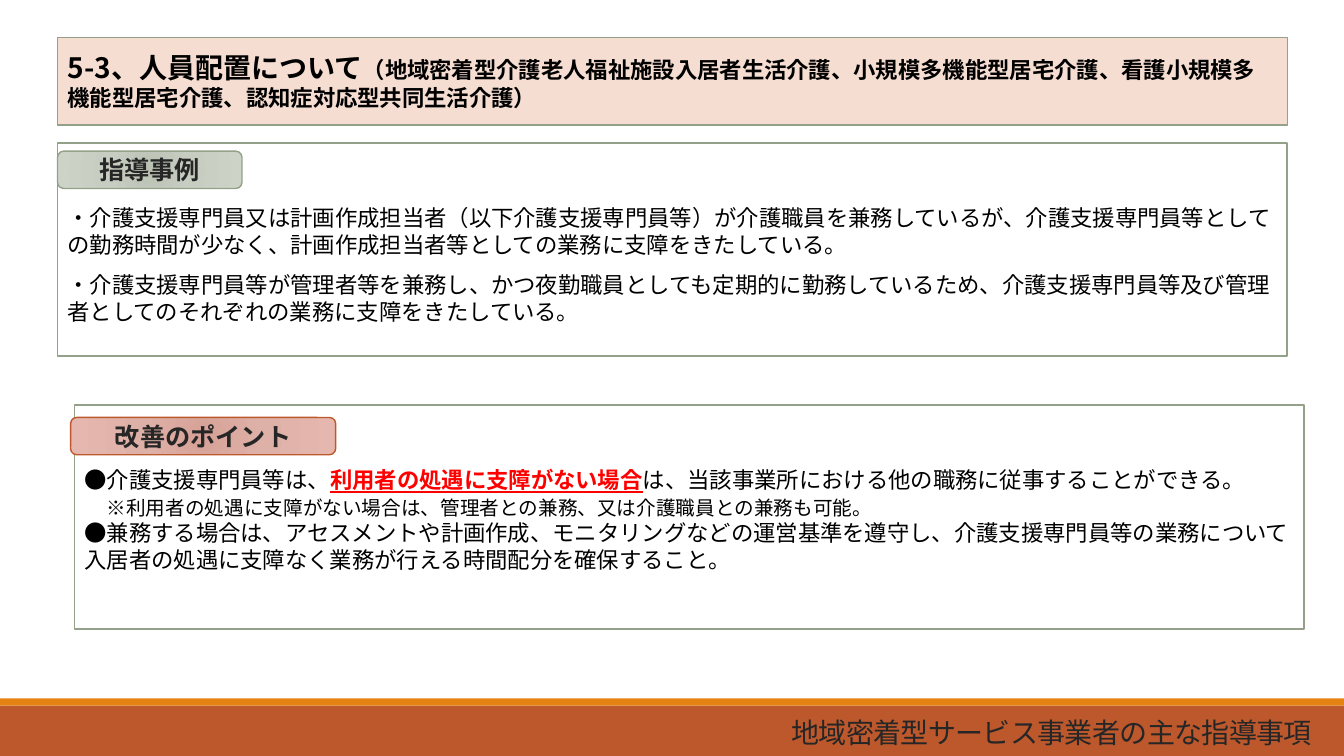
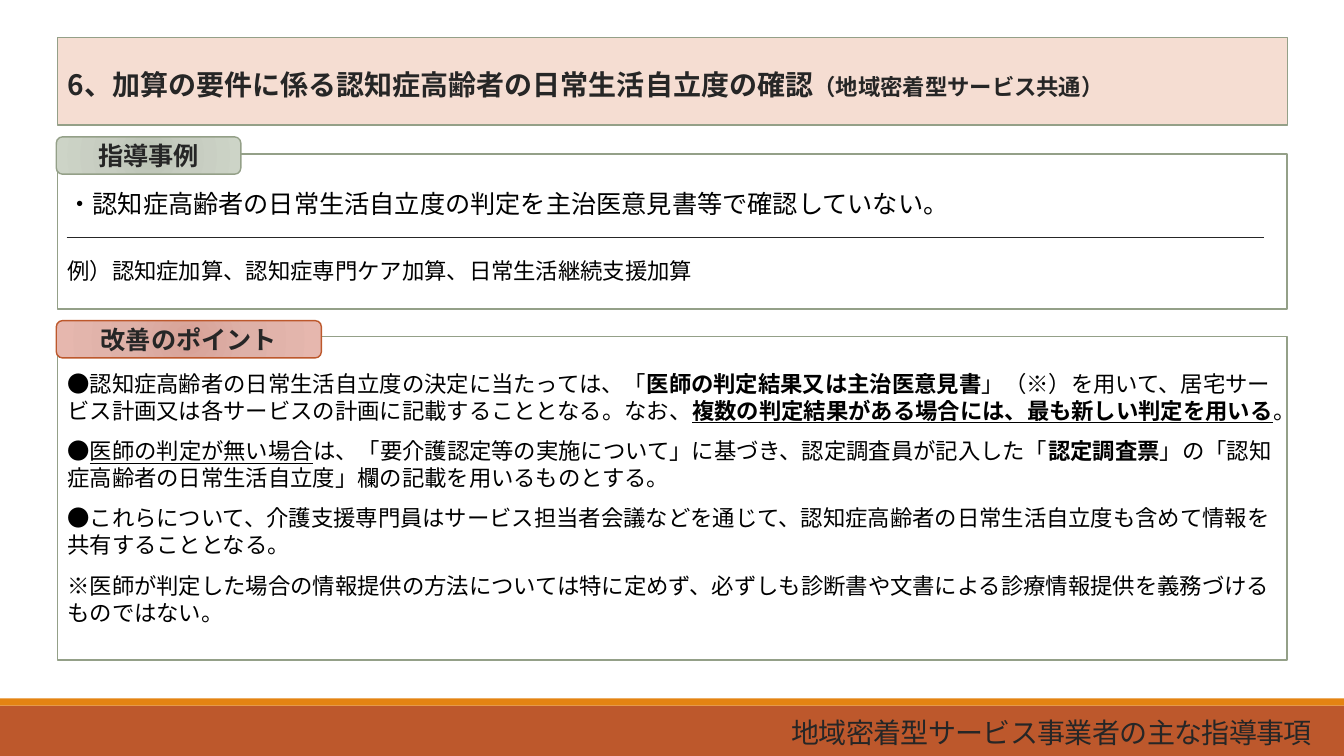
from dataclasses import dataclass

from lxml.etree import SubElement
from pptx import Presentation
from pptx.dml.color import RGBColor
from pptx.enum.lang import MSO_LANGUAGE_ID
from pptx.enum.shapes import MSO_CONNECTOR, MSO_SHAPE
from pptx.enum.text import MSO_ANCHOR, MSO_AUTO_SIZE, PP_ALIGN
from pptx.oxml import parse_xml
from pptx.oxml.ns import nsdecls, qn
from pptx.util import Cm, Pt


@dataclass(frozen=True)
class Theme:
    font: str = "Noto Sans CJK JP"
    black: str = "000000"
    dark: str = "262626"
    red: str = "FF0000"
    white: str = "FFFFFF"
    peach: str = "F5DDD2"
    sage: str = "94A088"
    rust: str = "BD582C"
    orange: str = "E48312"
    heading_size: int = 20
    tag_size: int = 18
    lead_size: int = 18
    body_size: int = 16
    note_size: int = 14
    leading: float = 1.2
    paragraph_gap: float = 9.6


@dataclass(frozen=True)
class Line:
    spans: tuple
    size: int = Theme.body_size
    before: float = Theme.paragraph_gap
    indent: float = 0


theme = Theme()
BOLD = {"bold": True}
UNDERLINE = {"underline": True}
SMALL = {"size": theme.body_size}
LEFT, WIDTH = 1.45, 30.99
FOOTER = "地域密着型サービス事業者の主な指導事項"

# Tag label: width, outline and gradient stops
TAGS = {
    "指導事例": (4.65, theme.sage, ("BBC3B5", "C7CDC1", "CDD4C7")),
    "改善のポイント": (6.68, theme.rust, ("D7A197", "DEB1A8", "E6B7AE")),
}

# Panel: tag, tag place, panel left, top and height, top inset, lines
PAGES = [
    {
        "heading": (
            ("5-3、人員配置について", {}),
            ("（地域密着型介護老人福祉施設入居者生活介護、小規模多機能型居宅介護、"
             "看護小規模多機能型居宅介護、認知症対応型共同生活介護）", SMALL),
        ),
        "heading_color": theme.black,
        "heading_leading": theme.body_size,
        "panels": [
            ("指導事例", (1.45, 3.81), LEFT, 3.61, 5.36, 1.54, [
                Line((("・介護支援専門員又は計画作成担当者（以下介護支援専門員等）が"
                       "介護職員を兼務しているが、介護支援専門員等としての勤務時間が少なく、"
                       "計画作成担当者等としての業務に支障をきたしている。", {}),), before=0),
                Line((("・介護支援専門員等が管理者等を兼務し、かつ夜勤職員としても"
                       "定期的に勤務しているため、介護支援専門員等及び管理者としての"
                       "それぞれの業務に支障をきたしている。", {}),)),
            ]),
            ("改善のポイント", (1.78, 10.52), 1.88, 10.21, 5.64, 1.54, [
                Line((("●介護支援専門員等は、", {}),
                      ("利用者の処遇に支障がない場合", BOLD | UNDERLINE | {"color": theme.red}),
                      ("は、当該事業所における他の職務に従事することができる。", {})), before=0),
                Line((("※利用者の処遇に支障がない場合は、管理者との兼務、"
                       "又は介護職員との兼務も可能。", {}),),
                     size=theme.note_size, before=2, indent=0.56),
                Line((("●兼務する場合は、アセスメントや計画作成、モニタリングなどの"
                       "運営基準を遵守し、介護支援専門員等の業務について入居者の処遇に"
                       "支障なく業務が行える時間配分を確保すること。", {}),), before=0),
            ]),
        ],
        "rules": [],
    },
    {
        "heading": (
            ("6、加算の要件に係る認知症高齢者の日常生活自立度の確認", {}),
            ("（地域密着型サービス共通）", SMALL),
        ),
        "heading_color": theme.dark,
        "heading_leading": theme.heading_size,
        "panels": [
            ("指導事例", (1.42, 3.45), LEFT, 3.89, 3.89, 0.85, [
                Line((("・認知症高齢者の日常生活自立度の判定を"
                       "主治医意見書等で確認していない。", {}),),
                     size=theme.lead_size, before=0),
                Line((("例）認知症加算、認知症専門ケア加算、日常生活継続支援加算", {}),),
                     before=27.5),
            ]),
            ("改善のポイント", (1.42, 8.08), LEFT, 8.48, 8.15, 0.85, [
                Line((("●認知症高齢者の日常生活自立度の決定に当たっては、「", {}),
                      ("医師の判定結果又は主治医意見書", BOLD),
                      ("」（※）を用いて、居宅サービス計画又は各サービスの計画に"
                       "記載することとなる。なお、", {}),
                      ("複数の判定結果がある場合には、最も新しい判定を用いる", BOLD | UNDERLINE),
                      ("。", {})), before=0),
                Line((("●", {}),
                      ("医師の判定が無い場合", UNDERLINE),
                      ("は、「要介護認定等の実施について」に基づき、"
                       "認定調査員が記入した「", {}),
                      ("認定調査票", BOLD),
                      ("」の「認知症高齢者の日常生活自立度」欄の記載を用いるものとする。", {}))),
                Line((("●これらについて、介護支援専門員はサービス担当者会議などを通じて、"
                       "認知症高齢者の日常生活自立度も含めて情報を共有することとなる。", {}),)),
                Line((("※医師が判定した場合の情報提供の方法については特に定めず、"
                       "必ずしも診断書や文書による診療情報提供を義務づけるものではない。", {}),)),
            ]),
        ],
        "rules": [5.99],
    },
]


def add_block(page, kind, left, top, width, height, fill=None, line=None, weight=1):
    shape = page.shapes.add_shape(kind, Cm(left), Cm(top), Cm(width), Cm(height))
    shape.shadow.inherit = False
    if fill:
        shape.fill.solid()
        shape.fill.fore_color.rgb = RGBColor.from_string(fill)
    if line:
        shape.line.color.rgb = RGBColor.from_string(line)
        shape.line.width = Pt(weight)
    else:
        shape.line.fill.background()
    return shape


def write_spans(para, spans, size, color, leading=None, align=PP_ALIGN.LEFT, **shared):
    """Add (text, style) runs; a span's style overrides the shared one."""
    para.alignment = align
    para.line_spacing = Pt((leading or size) * theme.leading)
    for text, style in spans:
        look = {"size": size, "color": color} | shared | style
        span = para.add_run()
        span.text = text
        font = span.font
        font.name = theme.font
        font.size = Pt(look["size"])
        font.bold = look.get("bold", False)
        font.underline = look.get("underline", False)
        font.color.rgb = RGBColor.from_string(look["color"])
        font.language_id = MSO_LANGUAGE_ID.JAPANESE
        properties = span._r.get_or_add_rPr()
        SubElement(properties, qn("a:ea"), typeface=theme.font)
        if "spacing" in look:
            properties.set("spc", str(look["spacing"]))


deck = Presentation()
deck.slide_width, deck.slide_height = Cm(33.87), Cm(19.05)
layout = deck.slide_layouts[5]

for number, content in enumerate(PAGES):
    page = deck.slides.add_slide(layout)

    if number == 0:
        # The bands belong to the layout, so every page shows them
        for top, height, color in ((17.78, 1.27, theme.rust), (17.6, 0.18, theme.orange)):
            band = add_block(page, MSO_SHAPE.RECTANGLE, 0, top, 33.87, height, color)
            layout.shapes.element.append(band.element)

    title = page.shapes.title
    title.left, title.top, title.width, title.height = Cm(LEFT), Cm(0.95), Cm(WIDTH), Cm(2.2)
    title.fill.solid()
    title.fill.fore_color.rgb = RGBColor.from_string(theme.peach)
    title.line.color.rgb = RGBColor.from_string(theme.sage)
    title.line.width = Pt(1)
    frame = title.text_frame
    frame.word_wrap = True
    frame.auto_size = MSO_AUTO_SIZE.NONE
    frame.vertical_anchor = MSO_ANCHOR.MIDDLE
    frame.margin_top = Cm(0.25)
    write_spans(frame.paragraphs[0], content["heading"], theme.heading_size,
                content["heading_color"], content["heading_leading"], bold=True)

    for label, (tag_left, tag_top), left, top, height, inset, lines in content["panels"]:
        panel = add_block(page, MSO_SHAPE.RECTANGLE, left, top, WIDTH, height,
                          theme.white, theme.sage, 1.25)
        frame = panel.text_frame
        frame.word_wrap = True
        frame.vertical_anchor = MSO_ANCHOR.TOP
        frame.margin_top = Cm(inset)
        for index, line in enumerate(lines):
            para = frame.add_paragraph() if index else frame.paragraphs[0]
            para.space_before = Pt(line.before)
            write_spans(para, line.spans, line.size, theme.black)
            if line.indent:
                para._p.get_or_add_pPr().set("marL", str(Cm(line.indent)))

        tag_width, outline, colors = TAGS[label]
        tag = add_block(page, MSO_SHAPE.ROUNDED_RECTANGLE, tag_left, tag_top,
                        tag_width, 0.94, line=outline)
        stops = "".join(
            f'<a:gs pos="{place}000"><a:srgbClr val="{color}"/></a:gs>'
            for place, color in zip((0, 45, 100), colors))
        gradient = parse_xml(
            f'<a:gradFill {nsdecls("a")} rotWithShape="1"><a:gsLst>{stops}</a:gsLst>'
            '<a:path path="circle"><a:fillToRect l="100000" t="100000" r="100000" b="100000"/>'
            '</a:path></a:gradFill>')
        tag.element.spPr.find(qn("a:prstGeom")).addnext(gradient)
        tag.text_frame.vertical_anchor = MSO_ANCHOR.MIDDLE
        write_spans(tag.text_frame.paragraphs[0], ((label, BOLD),), theme.tag_size,
                    theme.dark, align=PP_ALIGN.CENTER)

    for height in content["rules"]:
        rule = page.shapes.add_connector(MSO_CONNECTOR.STRAIGHT, Cm(1.68), Cm(height),
                                         Cm(31.85), Cm(height))
        rule.line.color.rgb = RGBColor.from_string(theme.dark)
        rule.line.width = Pt(0.5)
        SubElement(rule.element.spPr, qn("a:effectLst"))

    footer = page.shapes.add_textbox(Cm(LEFT), Cm(17.88), Cm(31.85), Cm(1.17))
    footer.text_frame.word_wrap = True
    footer.text_frame.vertical_anchor = MSO_ANCHOR.MIDDLE
    write_spans(footer.text_frame.paragraphs[0], ((FOOTER, {"spacing": -50}),),
                theme.heading_size, theme.dark, align=PP_ALIGN.RIGHT)

deck.save("out.pptx")
